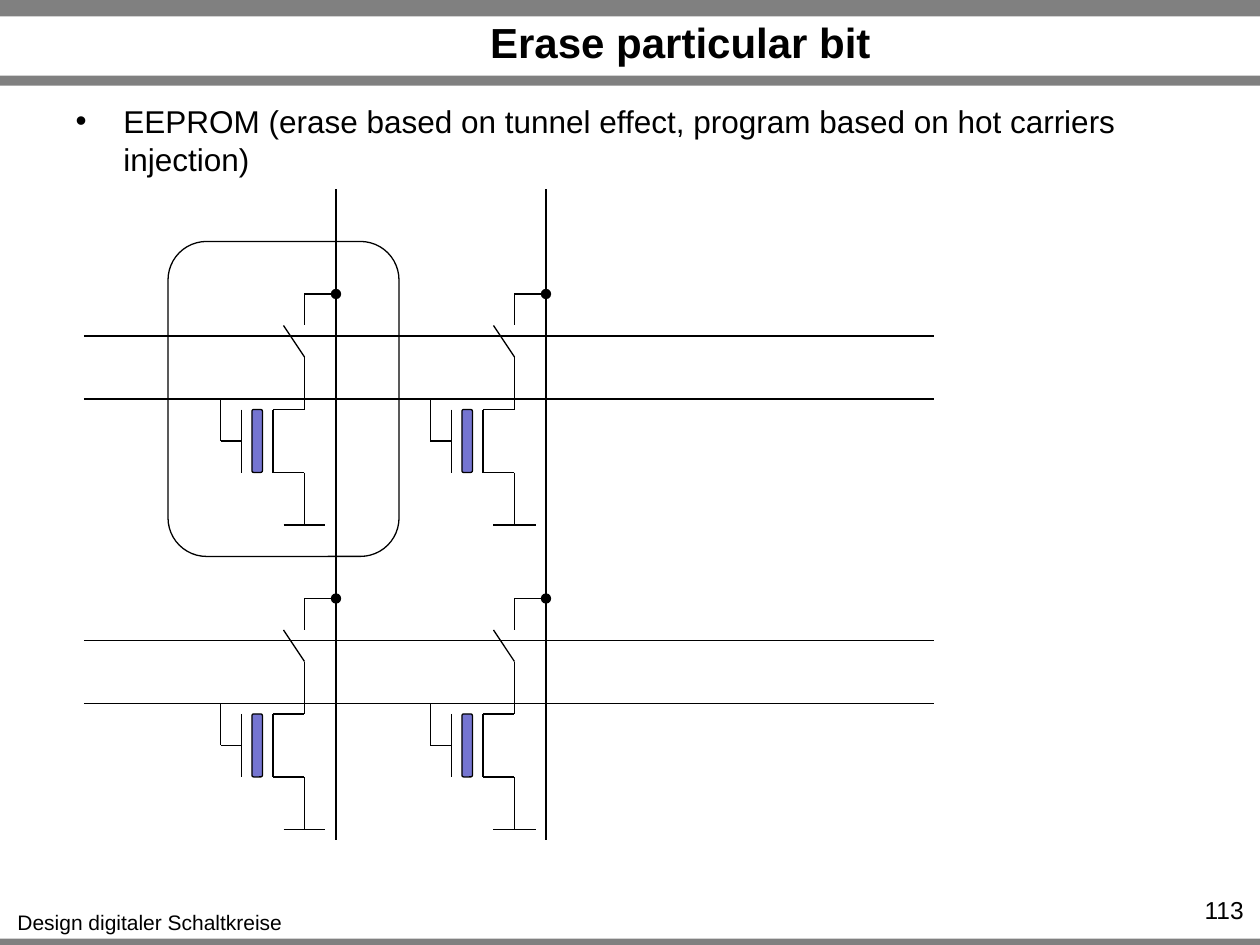
"""Build the slide on erasing one bit of an EEPROM array."""
from dataclasses import dataclass
from itertools import product
from typing import Any

import pptx
import pptx.dml.color
import pptx.enum.shapes
import pptx.enum.text
import pptx.oxml
import pptx.oxml.ns
import pptx.util

COLORS = {"ink": "000000", "bar": "808080", "gate": "7575D1"}
WIDTH, HEIGHT = pptx.util.Inches(10), pptx.util.Inches(7.5)
UNIT = WIDTH / 120
ALIGN = pptx.enum.text.PP_ALIGN
ANCHOR = pptx.enum.text.MSO_ANCHOR
SHAPE = pptx.enum.shapes.MSO_SHAPE

BIT_COLUMNS = (32, 52)
CELL_ROWS = (28, 57)


@dataclass(frozen=True)
class Wire:
    """A straight line between two grid points given as column, row."""
    x1: float
    y1: float
    x2: float
    y2: float
    dot: bool = False


@dataclass(frozen=True)
class Block:
    """A preset shape placed on the grid."""
    left: float
    top: float
    width: float
    height: float
    kind: Any = SHAPE.ROUNDED_RECTANGLE
    fill: str = ""
    outlined: bool = True


SWITCH_BLADE = Wire(-3, 6, -5, 3)
CELL_WIRES = (
    Wire(-3, 0, -3, 3),
    Wire(-3, 6, -3, 10),
    Wire(-6, 11, -6, 17),
    Wire(-6, 11, -3, 11),
    Wire(-6, 17, -3, 17),
    Wire(-3, 6, -3, 11),
    Wire(-3, 17, -3, 22),
    Wire(-9, 11, -9, 17),
    Wire(-3, 0, 0, 0),
    Wire(0, 2, 0, 0, dot=True),
    Wire(-5, 22, -1, 22),
    Wire(-9, 14, -11, 14),
    Wire(-11, 14, -11, 10),
)
BARS = (
    Block(0, 89.4, 120, 0.96, SHAPE.RECTANGLE, "bar", False),
    Block(0, 0, 120, 1.56, SHAPE.RECTANGLE, "bar", False),
    Block(0, 7.2, 120, 0.96, SHAPE.RECTANGLE, "bar", False),
)
SELECTED_CELL = Block(16, 23, 22, 30)


def grid(value: float) -> int:
    """Turn grid units into a length."""
    return round(value * UNIT)


def color(name: str) -> pptx.dml.color.RGBColor:
    """Look up a named colour."""
    return pptx.dml.color.RGBColor.from_string(COLORS[name])


def apply(target: Any, **values: Any) -> None:
    """Set several attributes on one object."""
    for name, value in values.items():
        setattr(target, name, value)


def add_element(parent: Any, tag: str, **attributes: str) -> None:
    """Append a drawing element with its attributes."""
    element = pptx.oxml.parse_xml(f"<{tag} {pptx.oxml.ns.nsdecls('a')}/>")
    for name, value in attributes.items():
        element.set(name, value)
    parent.append(element)


def draw_wire(shapes: Any, wire: Wire, column: float = 0, row: float = 0) -> None:
    """Draw a wire shifted by a column and a row."""
    line = shapes.add_connector(
        pptx.enum.shapes.MSO_CONNECTOR.STRAIGHT,
        grid(column + wire.x1), grid(row + wire.y1),
        grid(column + wire.x2), grid(row + wire.y2))
    line.line.color.rgb = color("ink")
    line.line.width = pptx.util.Pt(0.75)
    properties = line._element.spPr
    if wire.dot:
        add_element(properties.find(pptx.oxml.ns.qn("a:ln")), "a:tailEnd", type="oval")
    add_element(properties, "a:effectLst")


def draw_block(shapes: Any, block: Block) -> None:
    """Draw a preset shape with its fill and outline."""
    shape = shapes.add_shape(block.kind, *map(grid, (
        block.left, block.top, block.width, block.height)))
    shape.shadow.inherit = False
    if block.fill:
        shape.fill.solid()
        shape.fill.fore_color.rgb = color(block.fill)
    else:
        shape.fill.background()
    if block.outlined:
        shape.line.color.rgb = color("ink")
        shape.line.width = pptx.util.Pt(0.75)
    else:
        shape.line.fill.background()


def write(box: Any, area: tuple[float, ...], text: str, size: float, align: Any,
          wrap: bool = True, anchor: Any = ANCHOR.TOP, bold: bool = False,
          bullet: bool = False) -> None:
    """Place a box by shares of the slide and fill it with one paragraph."""
    left, top, width, height = area
    apply(box, left=round(left * WIDTH), top=round(top * HEIGHT),
          width=round(width * WIDTH), height=round(height * HEIGHT))
    frame = box.text_frame
    apply(frame, word_wrap=wrap, vertical_anchor=anchor,
          auto_size=pptx.enum.text.MSO_AUTO_SIZE.NONE)
    para = frame.paragraphs[0]
    apply(para, alignment=align, space_before=pptx.util.Pt(0))
    if bullet:
        properties = para._p.get_or_add_pPr()
        indent = pptx.util.Inches(0.38)
        properties.set("marL", str(indent))
        properties.set("indent", str(-indent))
        add_element(properties, "a:buChar", char="•")
    span = para.add_run()
    span.text = text
    apply(span.font, name="Arial", size=pptx.util.Pt(size), bold=bold)
    span.font.color.rgb = color("ink")


def draw_array(shapes: Any) -> None:
    """Draw the bit lines, the row lines and the memory cells."""
    for column in BIT_COLUMNS:
        draw_wire(shapes, Wire(0, 18, 0, 80), column)
    for row, offset in product(CELL_ROWS, (4, 10)):
        draw_wire(shapes, Wire(8, offset, 89, offset), row=row)
    for row, column in product(CELL_ROWS, BIT_COLUMNS):
        draw_wire(shapes, SWITCH_BLADE, column, row)
        cell = shapes.add_group_shape()
        for wire in CELL_WIRES:
            draw_wire(cell.shapes, wire, column, row)
    draw_block(shapes, SELECTED_CELL)
    for row, column in product(CELL_ROWS, BIT_COLUMNS):
        draw_block(shapes, Block(column - 8, row + 11, 1, 6, fill="gate"))


def main() -> None:
    """Build and save the deck."""
    deck = pptx.Presentation()
    apply(deck, slide_width=WIDTH, slide_height=HEIGHT)
    page = deck.slides.add_slide(deck.slide_layouts[1])
    shapes = page.shapes
    for bar in BARS:
        draw_block(shapes, bar)
    write(shapes.add_textbox(0, 0, 0, 0), (0.003, 0.956, 0.232, 0.04),
          "Design digitaler Schaltkreise", 12, ALIGN.CENTER, wrap=False)
    write(shapes.title, (0.13, 0.019, 0.82, 0.05), "Erase particular bit", 24,
          ALIGN.CENTER, anchor=ANCHOR.MIDDLE, bold=True)
    write(page.placeholders[1], (0.05, 0.101, 0.9, 0.088),
          "EEPROM (erase based on tunnel effect, program based on hot carriers injection)",
          18, ALIGN.LEFT, bullet=True)
    write(shapes.add_textbox(0, 0, 0, 0), (0.91, 0.941, 0.087, 0.032),
          "113", 14, ALIGN.RIGHT)
    draw_array(shapes)
    deck.save("out.pptx")


if __name__ == "__main__":
    main()
